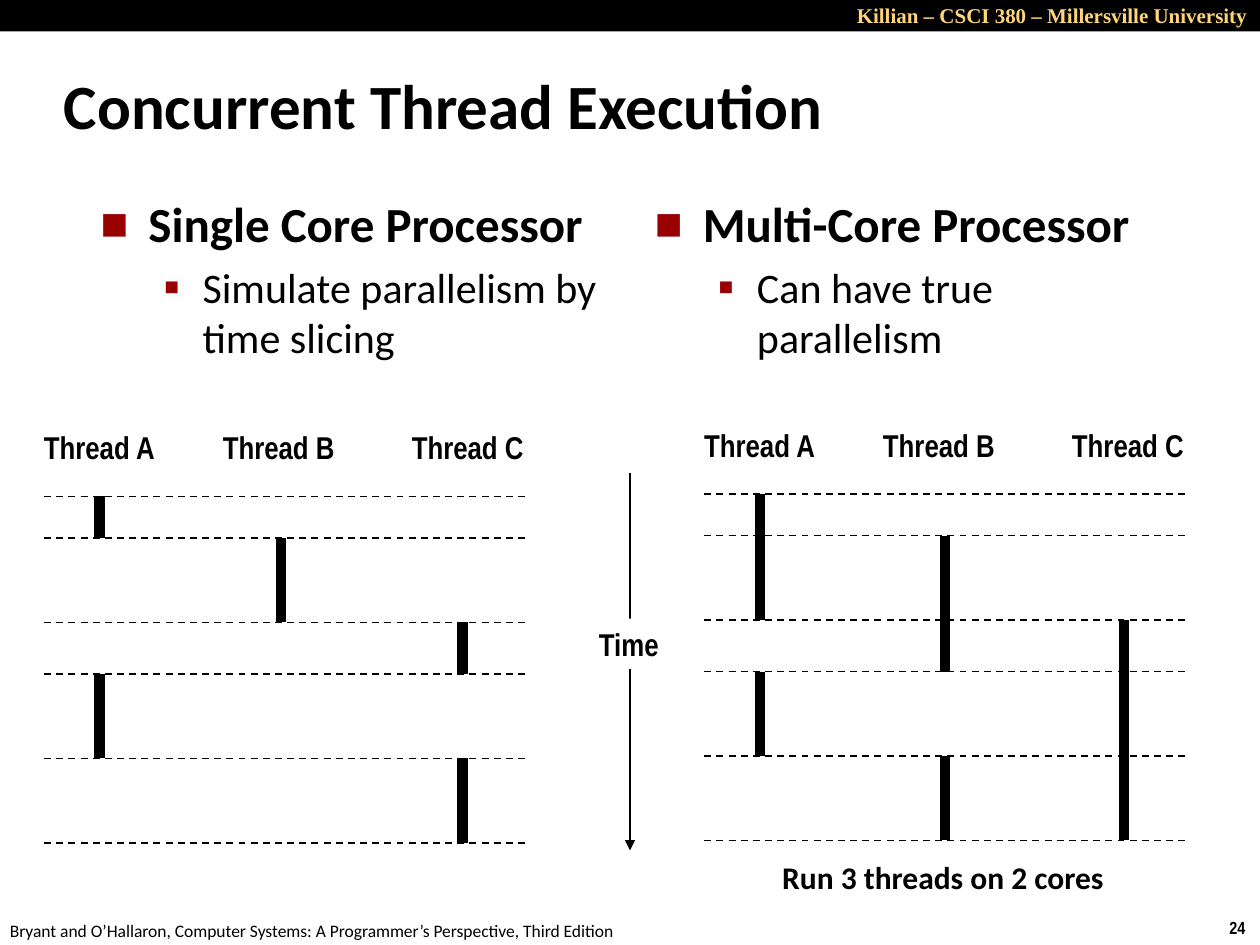
from lxml.etree import SubElement
from pptx import Presentation
from pptx.dml.color import RGBColor
from pptx.enum.dml import MSO_LINE
from pptx.enum.shapes import MSO_CONNECTOR, MSO_SHAPE
from pptx.enum.text import MSO_ANCHOR, PP_ALIGN
from pptx.oxml.ns import qn
from pptx.util import Inches, Pt

# Content
HEADER = "Killian – CSCI 380 – Millersville University"
TITLE = "Concurrent Thread Execution"
FOOTER = "Bryant and O’Hallaron, Computer Systems: A Programmer’s Perspective, Third Edition"
PAGE = "24"
CAPTION = "Run 3 threads on 2 cores"
COLUMNS = [
    ("Single Core Processor", "Simulate parallelism by time slicing"),
    ("Multi-Core Processor", "Can have true parallelism"),
]
THREADS = ["Thread A", "Thread B", "Thread C"]

# Each run: thread, first tick, last tick
SINGLE_CORE_RUNS = [(0, 0, 1), (1, 1, 2), (2, 2, 3), (0, 3, 4), (2, 4, 5)]
MULTI_CORE_RUNS = [(0, 0, 2), (1, 1, 3), (2, 2, 5), (0, 3, 4), (1, 4, 5)]

# Layout in inches
WIDTH, HEIGHT = 10, 7.5
TICKS = [0, 0.33, 1, 1.41, 2.08, 2.75]
LABEL_OFFSETS = [-0.1, 1.32, 2.82]
TICK_WIDTH = 3.82
DIAGRAMS = [  # left, top, thread line offsets, runs
    (0.35, 3.94, [0.44, 1.88, 3.32], SINGLE_CORE_RUNS),
    (5.59, 3.92, [0.44, 1.91, 3.33], MULTI_CORE_RUNS),
]
BODY_LEFT, BODY_STEP = 0.7, 4.4
BULLETS = [  # character, size in percent, indent, hanging, font size, bold
    ("■", 60, 0.38, 0.38, 28, True),
    ("▪", 110, 0.81, 0.31, 24, False),
]
COLORS = {"ink": "000000", "paper": "FFFFFF", "gold": "FFD579", "bullet": "990000"}

deck = Presentation()
deck.slide_width, deck.slide_height = Inches(WIDTH), Inches(HEIGHT)
slide = deck.slides.add_slide(deck.slide_layouts[6])


def rgb(name):
    return RGBColor.from_string(COLORS[name])


def add_text(paragraphs, left, top, width, height, size=18, font="Calibri", bold=True,
             color="ink", align=PP_ALIGN.LEFT, anchor=MSO_ANCHOR.TOP, wrap=False,
             fill=None, bullets=None):
    box = slide.shapes.add_textbox(Inches(left), Inches(top), Inches(width), Inches(height))
    if fill:
        box.fill.solid()
        box.fill.fore_color.rgb = rgb(fill)
    frame = box.text_frame
    frame.word_wrap = wrap
    frame.vertical_anchor = anchor
    frame.text = "\n".join(paragraphs)
    for level, paragraph in enumerate(frame.paragraphs):
        paragraph.alignment = align
        run_font = paragraph.runs[0].font
        run_font.name, run_font.size, run_font.bold = font, Pt(size), bold
        run_font.color.rgb = rgb(color)
        if bullets:
            add_bullet(paragraph, level, *bullets[level])


def add_bullet(paragraph, level, mark, percent, indent, hanging, size, bold):
    paragraph.level = level
    paragraph.space_before = Pt(size * 0.2)
    paragraph.runs[0].font.size = Pt(size)
    paragraph.runs[0].font.bold = bold
    properties = paragraph._p.get_or_add_pPr()
    properties.set("marL", str(Inches(indent)))
    properties.set("indent", str(-Inches(hanging)))
    bullet_color = SubElement(properties, qn("a:buClr"))
    SubElement(bullet_color, qn("a:srgbClr"), val=COLORS["bullet"])
    SubElement(properties, qn("a:buSzPct"), val=str(percent * 1000))
    SubElement(properties, qn("a:buFont"), typeface="Calibri")
    SubElement(properties, qn("a:buChar"), char=mark)


def add_line(x1, y1, x2, y2, weight=1, dashed=False, arrow=False):
    line = slide.shapes.add_connector(MSO_CONNECTOR.STRAIGHT, Inches(x1), Inches(y1),
                                      Inches(x2), Inches(y2))
    line.line.color.rgb = rgb("ink")
    line.line.width = Pt(weight)
    if dashed:
        line.line.dash_style = MSO_LINE.DASH
    if arrow:
        SubElement(line.line._get_or_add_ln(), qn("a:tailEnd"), type="triangle")
    SubElement(line._element.spPr, qn("a:effectLst"))


# Header band and footer
band = slide.shapes.add_shape(MSO_SHAPE.RECTANGLE, 0, 0, Inches(WIDTH), Inches(0.25))
band.shadow.inherit = False
band.fill.solid()
band.fill.fore_color.rgb = rgb("ink")
band.line.fill.background()
add_text([HEADER], WIDTH - 5.5, -0.03, 5.5, 0.3, size=12, font="Times New Roman",
         color="gold", align=PP_ALIGN.RIGHT, wrap=True)
add_text([FOOTER], -0.02, 7.25, 5.08, 0.27, size=10, bold=False)
add_text([PAGE], 9.66, 7.23, 0.34, 0.27, size=10, font="Arial Narrow")

# Title and bullet columns
add_text([TITLE], 0.41, 0.41, 8.3, 0.83, size=36, anchor=MSO_ANCHOR.MIDDLE, wrap=True)
for index, column in enumerate(COLUMNS):
    add_text(column, BODY_LEFT + index * BODY_STEP, 1.49, 4.23, 5.44, wrap=True,
             bullets=BULLETS)

# Time axis
add_line(WIDTH / 2, 3.75, WIDTH / 2, 6.75, arrow=True)
add_text(["Time"], 4.65, 4.91, 0.68, 0.4, font="Arial Narrow", align=PP_ALIGN.CENTER,
         fill="paper")

# Thread diagrams
for left, top, lanes, runs in DIAGRAMS:
    for thread, offset in zip(THREADS, LABEL_OFFSETS):
        add_text([thread], left + offset, top - 0.59, 1.1, 0.4, font="Arial Narrow")
    for thread, start, end in runs:
        x = left + lanes[thread]
        add_line(x, top + TICKS[start], x, top + TICKS[end], weight=6)
    for tick in TICKS:
        add_line(left, top + tick, left + TICK_WIDTH, top + tick, dashed=True)
add_text([CAPTION], 6.11, 6.76, 2.78, 0.4)

deck.save("out.pptx")
